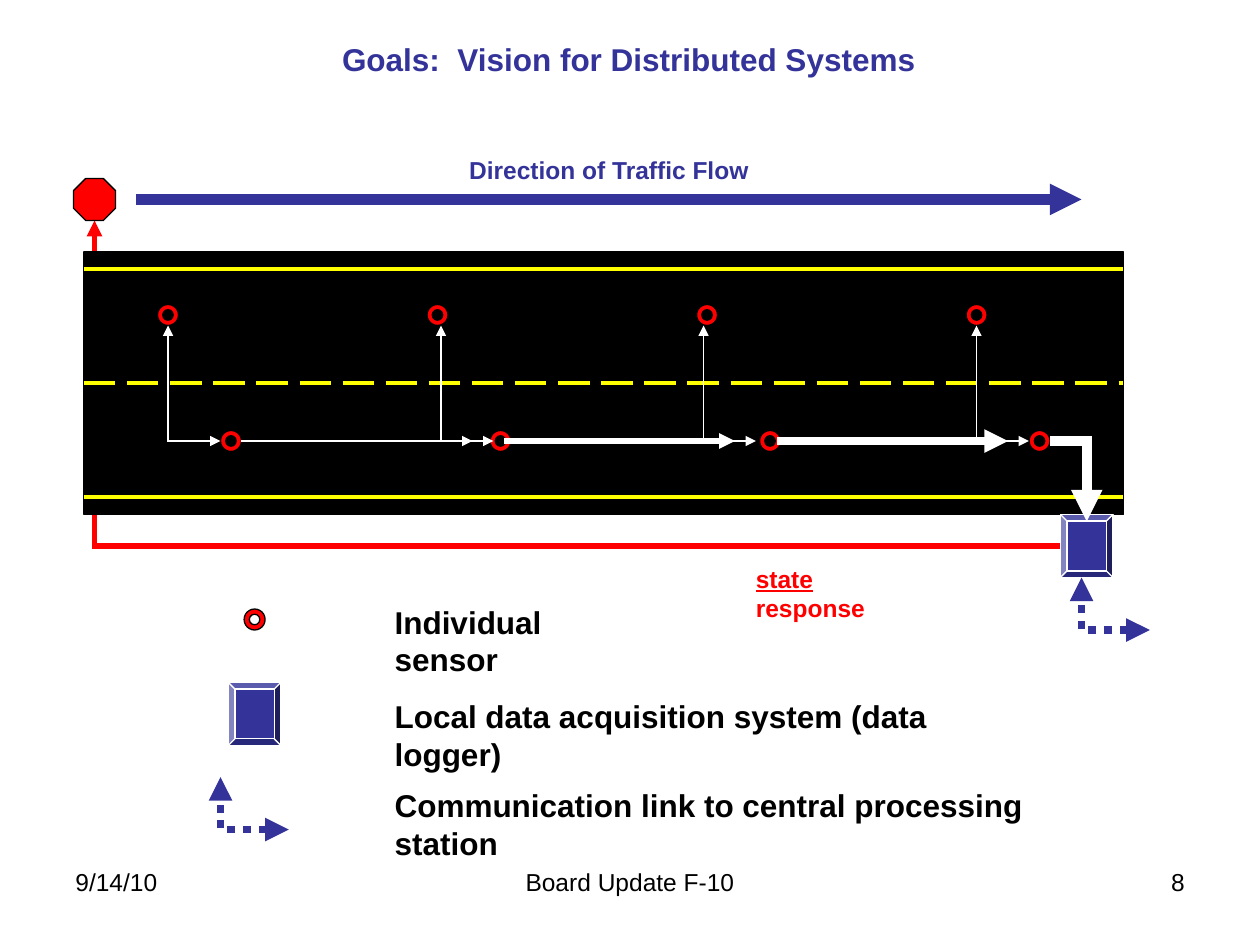
from pptx import Presentation, util as u
from pptx.dml.color import RGBColor
from pptx.enum import dml, shapes, text
from pptx.oxml import ns
from lxml import etree

HUE = {"blue": "333399", "red": "FF0000", "black": "000000",
       "white": "FFFFFF", "gold": "FFFF00"}
CELL = 12  # grid cells to the inch

# All places are in grid cells: left, top, width, height
ROAD = (8, 24, 99, 25)
EDGES = (47.3, 25.65)
FIRST, PITCH, COUNT = 15, 25.67, 4
LANES = ((6, 41), (0, 29))  # offset from first column, top
LINKS = (16, 42, 67, 93)
FLOWS = ((23, 45, 0.75), (48, 70, 3), (74, 96, 4.5))  # from, to, weight
COMMS = ((103, 55), (21, 74))
BOXES = ((101, 49), (21.75, 65))
LABELS = [
    ("Individual sensor", (36.4, 56.8, 24.4, 4.4)),
    ("Local data acquisition system (data logger)", (36.4, 65.8, 57.2, 4.4)),
    ("Communication link to central processing station", (36.4, 74.3, 65.2, 4.4)),
]
FOOT = [
    ("9/14/10", 6, 28, "LEFT"),
    ("Board Update F-10", 41, 38, "CENTER"),
    ("8", 86, 28, "RIGHT"),
]

deck = Presentation()
deck.slide_width, deck.slide_height = u.Inches(10), u.Inches(7.5)
page = deck.slides.add_slide(deck.slide_layouts[6]).shapes


def cells(*nums):
    return [u.Inches(n / CELL) for n in nums]


def rgb(name):
    return RGBColor.from_string(HUE[name])


def write(runs, at, size=14, hue="black", bold=False, align="LEFT"):
    """Add a text box; runs is a string or a list of (words, underline)."""
    frame = page.add_textbox(*cells(*at)).text_frame
    frame.word_wrap = True
    para = frame.paragraphs[0]
    para.alignment = getattr(text.PP_ALIGN, align)
    for words, under in [(runs, False)] if isinstance(runs, str) else runs:
        run = para.add_run()
        run.text = words
        font = run.font
        font.name, font.size, font.bold = "Arial", u.Pt(size), bold
        font.underline = under
        font.color.rgb = rgb(hue)


def shape(kind, at, fill, edge="black", adj=None):
    item = page.add_shape(getattr(shapes.MSO_SHAPE, kind), *cells(*at))
    item.shadow.inherit = False
    item.fill.solid()
    item.fill.fore_color.rgb = rgb(fill)
    item.line.color.rgb = rgb(edge)
    item.line.width = u.Pt(0.75)
    if adj is not None:
        item.adjustments[0] = adj
    return item


def line(ends, hue, weight, tips=(), dash=None, bend=False, turn=False):
    """Add a straight line, or one right-angle bend, turned half round if asked."""
    kind = shapes.MSO_CONNECTOR.ELBOW if bend else shapes.MSO_CONNECTOR.STRAIGHT
    item = page.add_connector(kind, *cells(*ends))
    item.line.color.rgb = rgb(hue)
    item.line.width = u.Pt(weight)
    if dash:
        item.line.dash_style = getattr(dml.MSO_LINE, dash)
    props = item._element.spPr
    if bend:
        props.find(ns.qn("a:prstGeom")).set("prst", "bentConnector2")
    if turn:
        props.find(ns.qn("a:xfrm")).set("rot", "10800000")
    stroke = props.find(ns.qn("a:ln"))
    etree.SubElement(stroke, ns.qn("a:miter"), lim="800000")
    for tip in tips:
        etree.SubElement(stroke, ns.qn(f"a:{tip}End"), type="triangle")
    etree.SubElement(props, ns.qn("a:effectLst"))
    return item


def sensor(left, top):
    shape("DONUT", (left, top, 2, 2), "red", adj=0.25)


def corner(left, top, wide, high, hue, weight, dash=None):
    """Add an L-shaped link with an arrowhead at both ends."""
    line((left, top, left + wide, top + high), hue, weight,
         ("head", "tail"), dash, bend=True, turn=True)


write("Goals:  Vision for Distributed Systems", (31.4, 3.2, 60, 4.8),
      size=18, hue="blue", bold=True)

# Road with the response line behind it
line((9, 21, 101.6, 52), "red", 3, ("tail",), bend=True, turn=True)
road = shape("RECTANGLE", ROAD, "black")
left, top, wide, high = ROAD
middle = line((left, top + high / 2, left + wide, top + high / 2),
              "gold", 2.25, dash="LONG_DASH")
middle.begin_connect(road, 1)
middle.end_connect(road, 3)
for y in EDGES:
    line((left, y, left + wide, y), "gold", 2.25)

# Sensors, loggers and the links between them
for box in BOXES:
    shape("BEVEL", (*box, 5, 6), "blue", "white", adj=0.125)
for shift, y in LANES:
    for col in range(COUNT):
        sensor(FIRST + shift + col * PITCH, y)
for x in LINKS:
    corner(x, 31, 5, 11, "white", 0.75)
for start, end, weight in FLOWS:
    line((start, 42, end, 42), "white", weight, ("tail",))
line((100, 42, 103.5, 49.65), "white", 6, ("tail",), bend=True)

# Traffic direction
line((13, 19, 103, 19), "blue", 6, ("tail",))
write("Direction of Traffic Flow", (43.5, 14.2, 33, 4), hue="blue", bold=True)
shape("OCTAGON", (7, 17, 4, 4), "red", adj=0.29)

# Legend and labels
sensor(23.25, 58)
for x, y in COMMS:
    corner(x, y, 6.5, 5, "blue", 4.5, "ROUND_DOT")
for words, at in LABELS:
    write(words, at, size=18, bold=True)
write([("state", True), (" response", False)], (70.8, 53.1, 18, 4),
      hue="red", bold=True)

for words, x, width, align in FOOT:
    write(words, (x, 82, width, 6.2), align=align)

deck.save("out.pptx")
